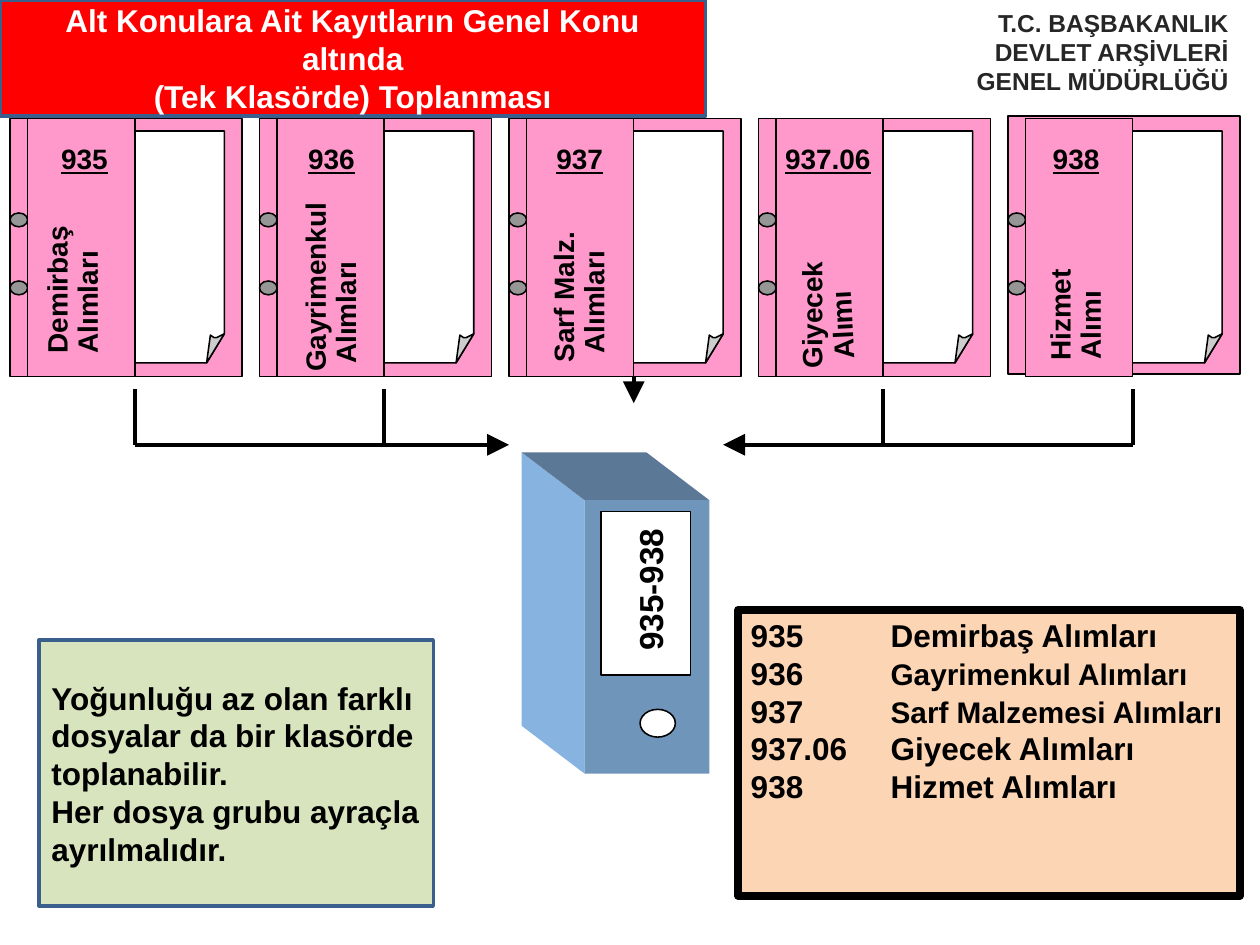
from dataclasses import dataclass

from lxml import etree
from pptx import Presentation
from pptx import util as u
from pptx.dml.color import RGBColor
from pptx.enum import shapes, text
from pptx.oxml import ns

RECT, OVAL = shapes.MSO_SHAPE.RECTANGLE, shapes.MSO_SHAPE.OVAL
LEFT, CENTER, RIGHT = text.PP_ALIGN.LEFT, text.PP_ALIGN.CENTER, text.PP_ALIGN.RIGHT


@dataclass(frozen=True)
class Theme:
    font: str = "Arial"
    black: str = "000000"
    white: str = "FFFFFF"
    dark: str = "262626"
    pink: str = "FF99CC"
    ring: str = "969696"
    curl: str = "CDCDCD"
    red: str = "FF0000"
    green: str = "D7E4BD"
    peach: str = "FCD5B5"
    border: str = "3A5F8C"
    binder_side: str = "86B3E0"
    binder_top: str = "5B7997"
    binder_front: str = "7095BA"
    body: float = 18
    small_body: float = 17
    label: float = 16
    heading: float = 14
    binder_label: float = 19
    thin: float = 0.88
    arrow: float = 2.5


@dataclass(frozen=True)
class Folder:
    """Code and two upright label lines; offsets run from the folder's left edge."""
    code: str
    code_x: float
    lines: tuple  # (text, centre y, length, rotation)
    lines_x: float
    top: float = 0.94


T = Theme()
FIRST_X, PITCH = 0.08, 1.98
SPINE_X, SPINE_W = 0.14, 0.85
LINE_GAP = 0.24
FOLDERS = (
    Folder("935", 0.59, (("Demirbaş", 2.3, 1.1, 270), ("Alımları", 2.4, 0.85, 270)), 0.37),
    Folder("936", 0.57, (("Gayrimenkul", 2.28, 1.4, 270), ("Alımları", 2.48, 0.85, 270)), 0.44),
    Folder("937", 0.56, (("Sarf Malz.", 2.36, 1.1, 270), ("Alımları", 2.4, 0.85, 270)), 0.43),
    Folder("937.06", 0.55, (("Giyecek", 2.5, 0.95, 270), ("Alımı", 2.58, 0.6, 267.1)), 0.42),
    Folder("938", 0.54, (("Hizmet", 2.5, 0.8, 270), ("Alımı", 2.58, 0.6, 270)), 0.41, 0.92),
)
SUBJECTS = (
    ("935", "Demirbaş Alımları", T.body),
    ("936", "Gayrimenkul Alımları", T.small_body),
    ("937", "Sarf Malzemesi Alımları", T.small_body),
    ("937.06", "Giyecek Alımları", T.body),
    ("938", "Hizmet Alımları", T.body),
)


def paint(sp, fill, line=None, width=T.thin):
    sp.shadow.inherit = False
    sp.fill.solid()
    sp.fill.fore_color.rgb = RGBColor.from_string(fill)
    if line:
        sp.line.color.rgb = RGBColor.from_string(line)
        sp.line.width = u.Pt(width)
    else:
        sp.line.fill.background()
    return sp


def add_box(s, kind, x, y, w, h, fill, line=None, width=T.thin):
    sp = s.shapes.add_shape(kind, u.Inches(x), u.Inches(y), u.Inches(w), u.Inches(h))
    return paint(sp, fill, line, width)


def add_polygon(s, points, fill, line=None):
    pts = [(u.Inches(x), u.Inches(y)) for x, y in points]
    builder = s.shapes.build_freeform(*pts[0], scale=1.0)
    builder.add_line_segments(pts[1:], close=True)
    return paint(builder.convert_to_shape(), fill, line)


def add_line(s, x1, y1, x2, y2, arrow=False):
    c = s.shapes.add_connector(shapes.MSO_CONNECTOR.STRAIGHT,
                               u.Inches(x1), u.Inches(y1), u.Inches(x2), u.Inches(y2))
    c.line.color.rgb = RGBColor.from_string(T.black)
    c.line.width = u.Pt(T.arrow)
    sp_pr = c._element.spPr
    if arrow:
        etree.SubElement(sp_pr.get_or_add_ln(), ns.qn("a:tailEnd"),
                         type="triangle", w="lg", len="lg")
    etree.SubElement(sp_pr, ns.qn("a:effectLst"))


def add_run(p, content, size, color=T.black, underline=None):
    r = p.add_run()
    r.text = content
    f = r.font
    f.name, f.size, f.bold, f.underline = T.font, u.Pt(size), True, underline
    f.color.rgb = RGBColor.from_string(color)


def write(sp, paragraphs, align, anchor, tab=None):
    """Fill a shape with paragraphs, each a list of add_run arguments."""
    tf = sp.text_frame
    tf.word_wrap = True
    tf.vertical_anchor = anchor
    for i, runs in enumerate(paragraphs):
        p = tf.add_paragraph() if i else tf.paragraphs[0]
        p.alignment = align
        if tab:
            tabs = etree.SubElement(p._p.get_or_add_pPr(), ns.qn("a:tabLst"))
            etree.SubElement(tabs, ns.qn("a:tab"), pos=str(u.Inches(tab)), algn="l")
        for run in runs:
            add_run(p, *run)


def add_label(s, content, cx, cy, w, size=T.label, rotation=0, underline=None, h=0.27):
    """Place a one-line label by its centre."""
    sp = s.shapes.add_textbox(u.Inches(cx - w / 2), u.Inches(cy - h / 2),
                              u.Inches(w), u.Inches(h))
    sp.rotation = rotation
    tf = sp.text_frame
    tf.margin_left = tf.margin_right = tf.margin_top = tf.margin_bottom = 0
    tf.word_wrap = False
    tf.auto_size = text.MSO_AUTO_SIZE.SHAPE_TO_FIT_TEXT
    p = tf.paragraphs[0]
    p.alignment = CENTER
    add_run(p, content, size, T.black, underline)


def add_folder(s, x, folder):
    add_box(s, RECT, x, folder.top, 1.84, 2.05, T.pink, T.black)
    for y in (1.69, 2.23):
        add_box(s, OVAL, x, y, 0.14, 0.11, T.ring, T.black)
    left, fold, right = x + 0.56, x + 1.56, x + 1.7
    add_polygon(s, [(left, 1.04), (left, 2.88), (fold, 2.88), (right, 2.65), (right, 1.04)],
                T.white, T.black)
    add_polygon(s, [(fold, 2.88), (fold + 0.03, 2.66), (fold + 0.06, 2.68),
                    (fold + 0.08, 2.68), (right, 2.65)], T.curl, T.black)
    add_box(s, RECT, x + SPINE_X, 0.94, SPINE_W, 2.05, T.pink, T.black)
    add_label(s, folder.code, x + folder.code_x, 1.26, 0.75, underline=True)
    for i, (line, cy, length, rotation) in enumerate(folder.lines):
        add_label(s, line, x + folder.lines_x + i * LINE_GAP, cy, length, rotation=rotation)


def add_arrows(s, xs):
    """Lead the outer folders sideways, and the middle one down, to the binder."""
    for x in xs[:2] + xs[3:]:
        add_line(s, x, 3.09, x, 3.53)
    add_line(s, xs[0], 3.53, 4.04, 3.53, arrow=True)
    add_line(s, xs[4], 3.53, 5.74, 3.53, arrow=True)
    add_line(s, xs[2], 2.99, xs[2], 3.2, arrow=True)


def add_binder(s):
    add_polygon(s, [(4.64, 3.97), (4.64, 6.14), (4.14, 5.76), (4.14, 3.59)], T.binder_side)
    add_polygon(s, [(5.63, 3.97), (4.64, 3.97), (4.14, 3.59), (5.13, 3.59)], T.binder_top)
    add_box(s, RECT, 4.64, 3.97, 0.99, 2.17, T.binder_front)
    add_box(s, RECT, 4.77, 4.06, 0.71, 1.3, T.white, T.black)
    add_box(s, OVAL, 5.08, 5.63, 0.28, 0.22, T.white, T.black)
    add_label(s, "935-938", 5.16, 4.68, 1.09, T.binder_label, 270, h=0.32)


def add_panels(s):
    top, middle = text.MSO_ANCHOR.TOP, text.MSO_ANCHOR.MIDDLE
    subjects = add_box(s, RECT, 5.86, 4.84, 3.98, 2.27, T.peach, T.black, 4.5)
    write(subjects, [[(code + "\t", T.body), (name, size)] for code, name, size in SUBJECTS],
          LEFT, top, tab=1.11)
    title = add_box(s, RECT, 0, 0, 5.6, 0.92, T.red, T.border, 2)
    write(title, [[(line, T.body, T.white)] for line in (
        "Alt Konulara Ait Kayıtların Genel Konu altında", "(Tek Klasörde) Toplanması")],
        CENTER, middle)
    note = add_box(s, RECT, 0.31, 5.08, 3.13, 2.11, T.green, T.border, 2)
    write(note, [[(line, T.body)] for line in (
        "Yoğunluğu az olan farklı dosyalar da bir klasörde toplanabilir.",
        "Her dosya grubu ayraçla ayrılmalıdır.")], LEFT, middle)
    office = add_box(s, RECT, 5.94, 0, 3.91, 0.82, T.white, T.white, 0.75)
    write(office, [[(line, T.heading, T.dark)] for line in (
        "T.C. BAŞBAKANLIK", "DEVLET ARŞİVLERİ", "GENEL MÜDÜRLÜĞÜ")], RIGHT, middle)


def main():
    prs = Presentation()
    prs.slide_width, prs.slide_height = u.Inches(10), u.Inches(7.5)
    s = prs.slides.add_slide(prs.slide_layouts[6])
    xs = [FIRST_X + i * PITCH for i in range(len(FOLDERS))]
    for x, folder in zip(xs, FOLDERS):
        add_folder(s, x, folder)
    add_arrows(s, [x + SPINE_X + SPINE_W for x in xs])
    add_binder(s)
    add_panels(s)
    prs.save("out.pptx")


if __name__ == "__main__":
    main()
